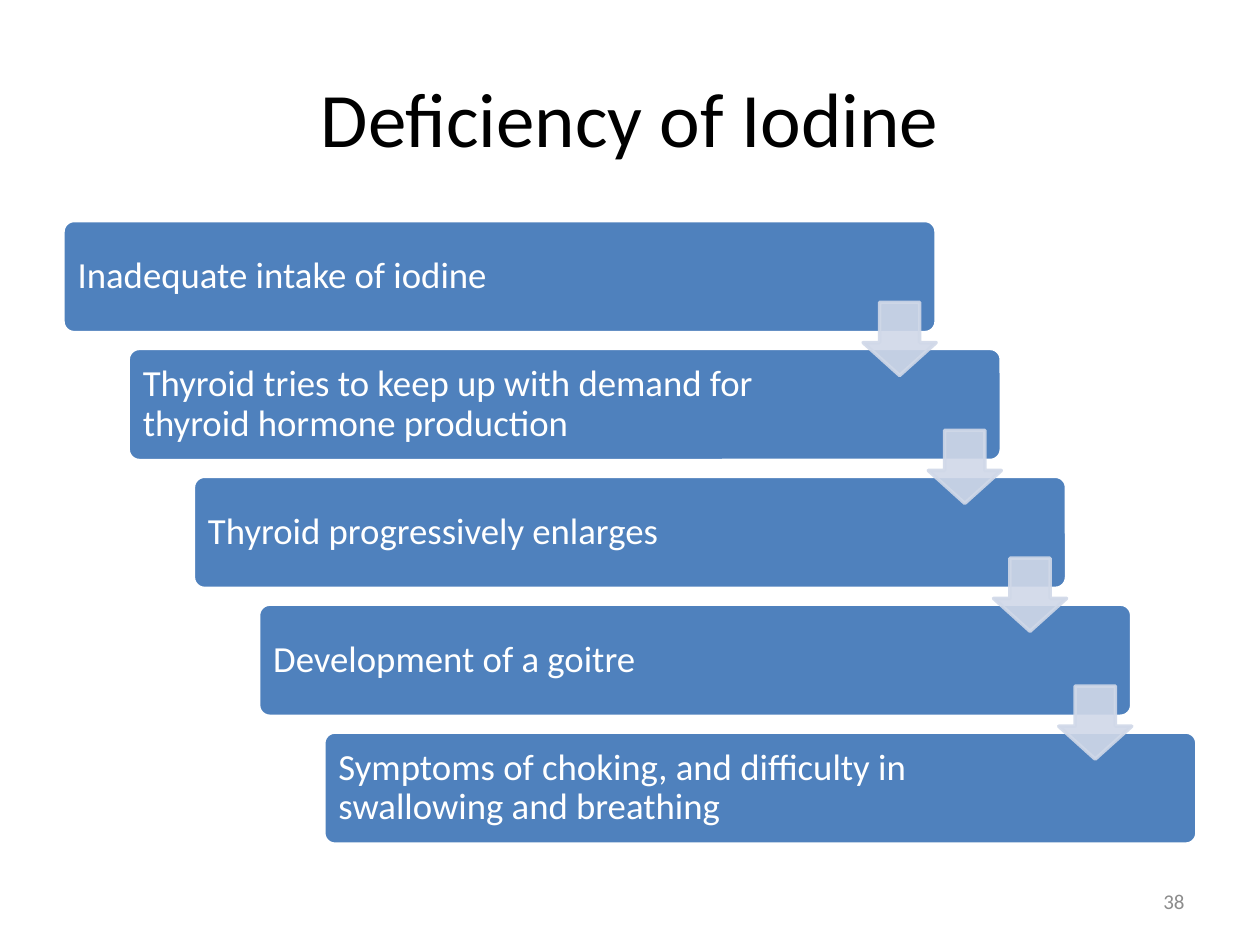
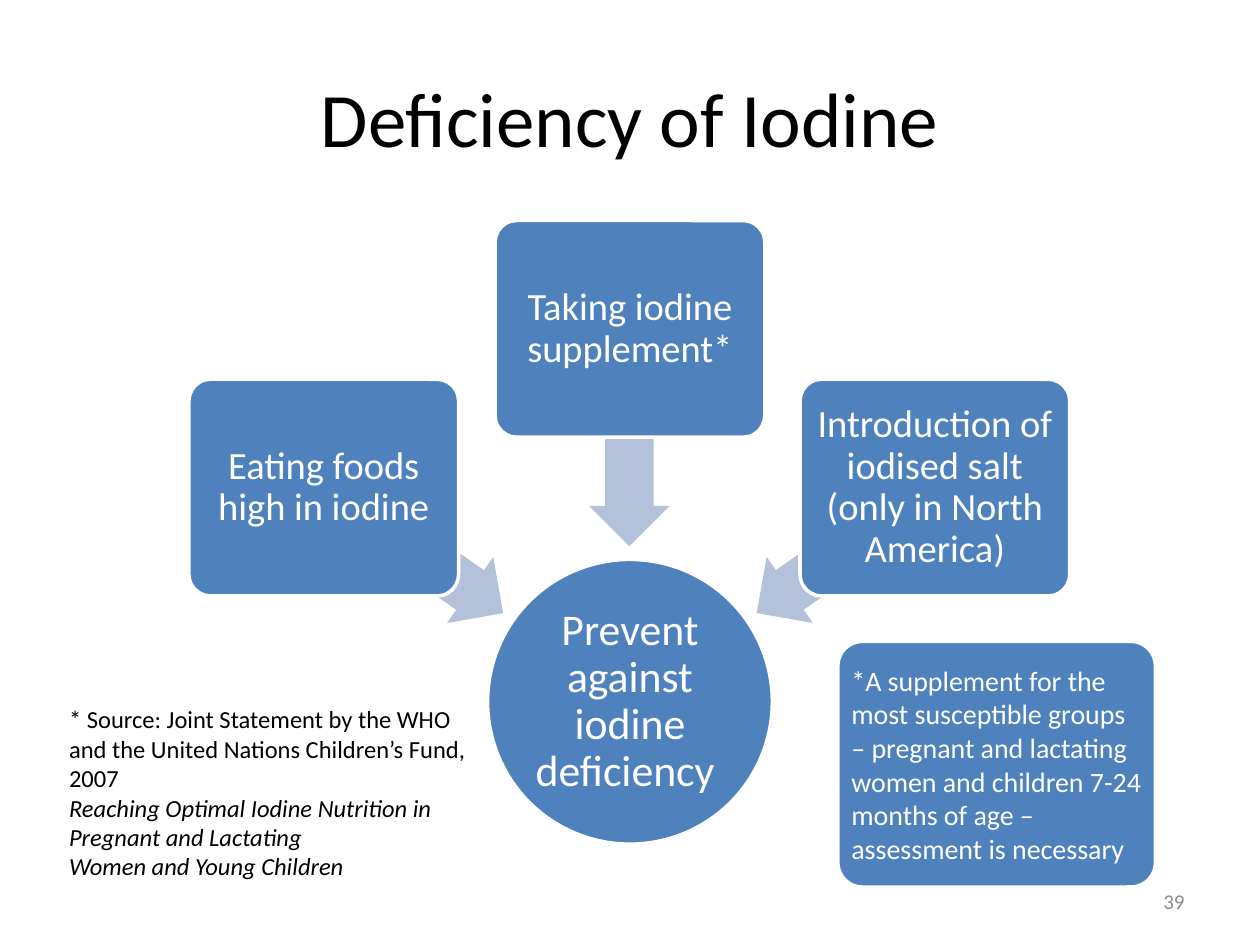
from lxml import etree
from pptx import Presentation
from pptx.dml.color import RGBColor
from pptx.enum.shapes import MSO_SHAPE
from pptx.enum.text import MSO_ANCHOR, PP_ALIGN
from pptx.oxml.ns import qn
from pptx.util import Inches, Pt

ROUND, OVAL = MSO_SHAPE.ROUNDED_RECTANGLE, MSO_SHAPE.OVAL
DOWN, LEFT_ARROW = MSO_SHAPE.DOWN_ARROW, MSO_SHAPE.LEFT_ARROW
MID, TOP = MSO_ANCHOR.MIDDLE, MSO_ANCHOR.TOP
LEFT, MIDDLE, RIGHT = PP_ALIGN.LEFT, PP_ALIGN.CENTER, PP_ALIGN.RIGHT

FONT = "Calibri"
BLUE, WHITE, BLACK, GREY = "4F81BD", "FFFFFF", "000000", "8C8C8C"
PALE, MIST = "D0D8E8", "B3C1DB"


def add_shape(slide, kind, box, fill, line=None, adj=()):
    shape = slide.shapes.add_shape(kind, *[Inches(v) for v in box])
    shape.shadow.inherit = False
    shape.fill.solid()
    shape.fill.fore_color.rgb = RGBColor.from_string(fill)
    if line:
        shape.line.color.rgb = RGBColor.from_string(line)
        shape.line.width = Pt(2)
    else:
        shape.line.fill.background()
    for i, value in enumerate(adj):
        shape.adjustments[i] = value
    return shape


def write(shape, lines, size, color, align=LEFT, anchor=MID, pads=None, space=None):
    """Write each (text, italic) pair as a paragraph; pads are left, top, right, bottom."""
    frame = shape.text_frame
    frame.word_wrap = True
    frame.vertical_anchor = anchor
    if pads:
        (frame.margin_left, frame.margin_top,
         frame.margin_right, frame.margin_bottom) = [Inches(v) for v in pads]
    for i, (text, italic) in enumerate(lines):
        para = frame.paragraphs[0] if i == 0 else frame.add_paragraph()
        para.alignment = align
        if space:
            para.line_spacing = space
        run = para.add_run()
        run.text = text
        run.font.name = FONT
        run.font.size = Pt(size)
        run.font.color.rgb = RGBColor.from_string(color)
        if italic:
            run.font.italic = True


prs = Presentation()
prs.slide_width, prs.slide_height = Inches(10), Inches(7.5)

# Shared title and page number
slides = []
for page in (38, 39):
    slide = prs.slides.add_slide(prs.slide_layouts[5])
    title = slide.shapes.title
    title.left, title.top = Inches(0.5), Inches(0.3)
    title.width, title.height = Inches(9), Inches(1.25)
    write(title, [("Deficiency of Iodine", False)], 44, BLACK, MIDDLE)
    number = slide.shapes.add_textbox(Inches(7.17), Inches(6.95), Inches(2.33), Inches(0.4))
    write(number, [(str(page), False)], 12, GREY, RIGHT)
    slides.append(slide)
chain, causes = slides

# Slide 38: staircase of steps
steps = [
    "Inadequate intake of iodine",
    "Thyroid tries to keep up with demand for thyroid hormone production",
    "Thyroid progressively enlarges",
    "Development of a goitre",
    "Symptoms of choking, and difficulty in swallowing and breathing",
]
wide, high, head = 6.93, 0.89, 0.58
left, top = 0.5, 1.75
gaps = len(steps) - 1
dx = (9.5 - wide - left) / gaps
dy = (6.7 - high - top) / gaps
for i, step in enumerate(steps):
    bar = add_shape(chain, ROUND, (left + i * dx, top + i * dy, wide, high), BLUE, WHITE, [0.1])
    write(bar, [(step, False)], 21, WHITE, pads=(0.09, 0.09, 1.18, 0.09), space=0.9)

# Slide 38: arrows between the steps
for i in range(gaps):
    x = left + i * dx + wide - head
    arrow = add_shape(chain, DOWN, (x, 2.4 + i * dy, head, head), PALE, PALE, [0.55, 0.45])
    for tint in arrow._element.spPr.iter(qn("a:srgbClr")):
        etree.SubElement(tint, qn("a:alpha")).set("val", "90000")

# Slide 39: goal in the circle
goal = add_shape(causes, OVAL, (3.87, 4.44, 2.26, 2.26), BLUE, WHITE)
write(goal, [("Prevent against iodine deficiency ", False)], 25, WHITE, MIDDLE,
      pads=[0.02] * 4, space=0.9)

# Slide 39: measures, each over its arrow (text, box, arrow place, turn)
measures = [
    ("Eating foods high in iodine", (1.5, 3.01), (2.42, 4.05), 215),
    ("Taking iodine supplement*", (3.93, 1.75), (4.13, 3.15), 270),
    ("Introduction of iodised salt (only in North America)", (6.35, 3.01), (5.85, 4.05), 325),
]
for text, spot, tail, turn in measures:
    arrow = add_shape(causes, LEFT_ARROW, (*tail, 1.73, 0.64), MIST, adj=[0.6, 0.5])
    arrow.rotation = turn
    card = add_shape(causes, ROUND, (*spot, 2.14, 1.72), BLUE, WHITE, [0.1])
    write(card, [(text, False)], 22, WHITE, MIDDLE, pads=[0.05] * 4, space=0.9)

# Slide 39: remark and source
remark = add_shape(causes, ROUND, (6.65, 5.09, 2.52, 1.95), BLUE, WHITE, [0.1])
write(remark, [("*A supplement for the most susceptible groups – pregnant and lactating women "
                "and children 7-24 months of age – assessment is necessary", False)],
      16, WHITE, pads=[0.05] * 4)
source = causes.shapes.add_textbox(Inches(0.45), Inches(5.54), Inches(3.46), Inches(1.51))
write(source, [
    ("* Source: Joint Statement by the WHO and the United Nations Children’s Fund, 2007", False),
    ("Reaching Optimal Iodine Nutrition in Pregnant and Lactating", True),
    ("Women and Young Children", True),
], 14, BLACK, anchor=TOP)

prs.save("out.pptx")
